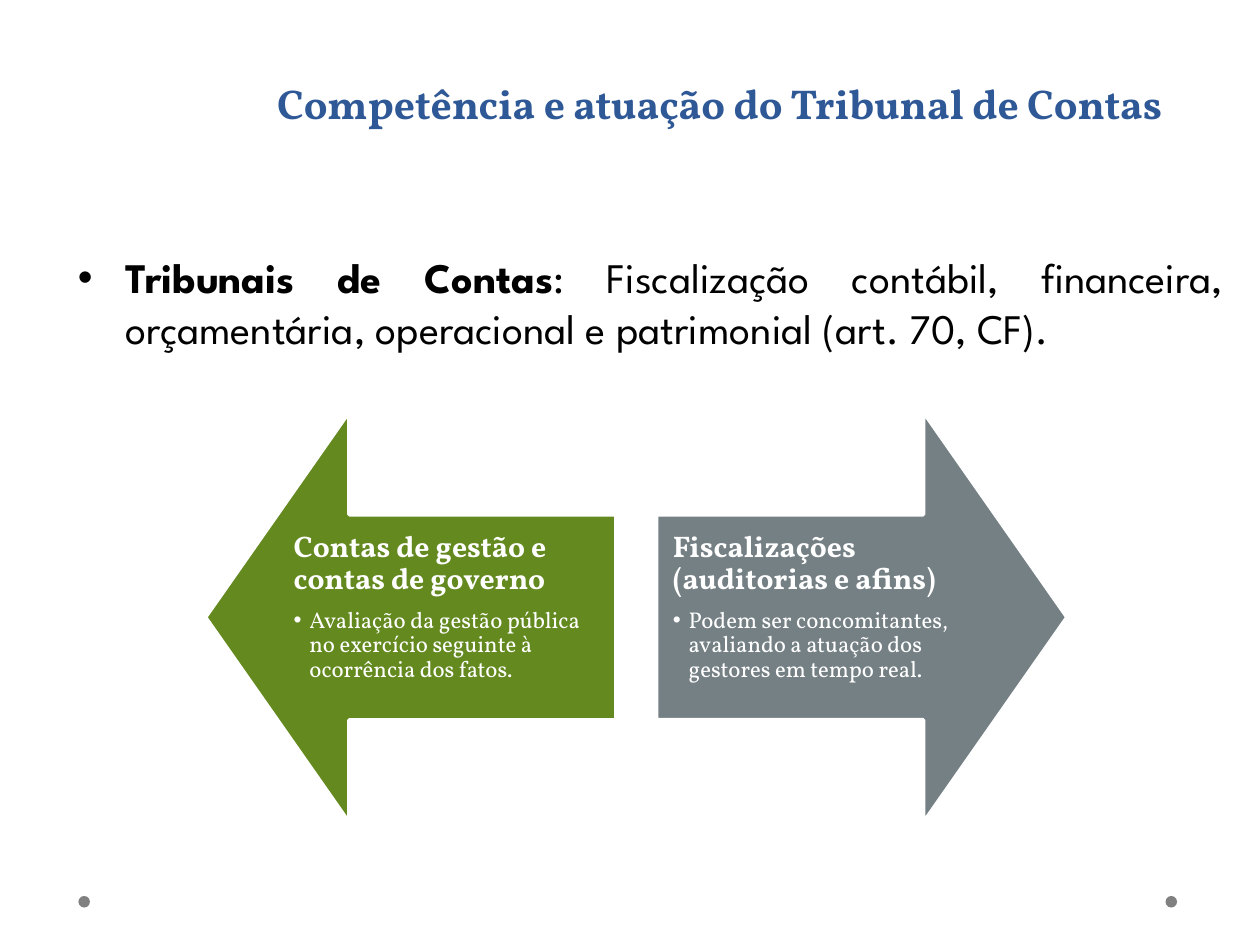
from lxml.etree import SubElement
from pptx import Presentation
from pptx.dml.color import RGBColor
from pptx.enum.shapes import MSO_SHAPE as SHAPE
from pptx.enum.text import MSO_ANCHOR as ANCHOR, PP_ALIGN as ALIGN
from pptx.oxml.ns import qn
from pptx.util import Pt

COLORS = {
    "title": "2F5897", "text": "000000", "white": "FFFFFF",
    "dot": "808080", "green": "63891F", "gray": "758085",
}
SERIF, SANS = "Vollkorn", "League Spartan"
ARROW_SIZE, ARROW_TOP = 234.7, 235.4
LABEL_W, LABEL_H, LABEL_TOP = 193.7, 117.4, 294.5


def color(name):
    return RGBColor.from_string(COLORS[name])


def add_shape(s, kind, x, y, size, fill):
    sp = s.shapes.add_shape(kind, Pt(x), Pt(y), Pt(size), Pt(size))
    sp.shadow.inherit = False
    sp.fill.solid()
    sp.fill.fore_color.rgb = color(fill)
    sp.line.fill.background()
    return sp


def add_box(s, x, y, w, h, anchor=ANCHOR.TOP, inset=None):
    tf = s.shapes.add_textbox(Pt(x), Pt(y), Pt(w), Pt(h)).text_frame
    tf.word_wrap = True
    tf.vertical_anchor = anchor
    if inset is not None:
        tf.margin_left = tf.margin_right = Pt(inset)
        tf.margin_top = tf.margin_bottom = Pt(inset)
    return tf


def add_run(p, text, size, font, fill, bold=False):
    r = p.add_run()
    r.text = text
    r.font.size = Pt(size)
    r.font.name = font
    r.font.bold = bold
    r.font.color.rgb = color(fill)


def set_bullet(p, indent):
    ppr = p._p.get_or_add_pPr()
    ppr.set("marL", str(Pt(indent)))
    ppr.set("indent", str(-Pt(indent)))
    SubElement(ppr, qn("a:buFont"), typeface="Arial")
    SubElement(ppr, qn("a:buChar"), char="•")


def add_arrow(s, x, rotation, fill, label_x, heading, detail):
    sp = add_shape(s, SHAPE.UP_ARROW, x, ARROW_TOP, ARROW_SIZE, fill)
    sp.rotation = rotation
    sp.adjustments[0], sp.adjustments[1] = 0.5, 0.35
    sp.line.color.rgb = color("white")
    sp.line.width = Pt(2.25)

    tf = add_box(s, label_x, LABEL_TOP, LABEL_W, LABEL_H, inset=9.4)
    p = tf.paragraphs[0]
    p.line_spacing, p.space_after = 0.9, Pt(7)
    add_run(p, heading, 17, SERIF, "white", bold=True)

    p = tf.add_paragraph()
    p.level = 1
    set_bullet(p, 9)
    p.line_spacing, p.space_after = 0.9, Pt(2)
    add_run(p, detail, 13, SERIF, "white")


def main():
    prs = Presentation()
    prs.slide_width, prs.slide_height = Pt(720), Pt(540)
    s = prs.slides.add_slide(prs.slide_layouts[6])

    # Footer dots
    for x in (666, 44.8):
        add_shape(s, SHAPE.OVAL, x, 512, 6.6, "dot")

    # Title
    p = add_box(s, 133.2, 9.4, 555.8, 67, ANCHOR.BOTTOM).paragraphs[0]
    p.alignment, p.line_spacing = ALIGN.CENTER, Pt(58)
    add_run(p, "Competência e atuação do Tribunal de Contas",
            23.8, SERIF, "title", bold=True)

    # Opposing arrows; each label fills its arrow's shaft
    left, right = 117.4, 375.1
    add_arrow(s, left, 270, "green", left + ARROW_SIZE - LABEL_W,
              "Contas de gestão e contas de governo",
              "Avaliação da gestão pública no exercício seguinte à "
              "ocorrência dos fatos.")
    add_arrow(s, right, 90, "gray", right,
              "Fiscalizações (auditorias e afins)",
              "Podem ser concomitantes, avaliando a atuação dos gestores "
              "em tempo real.")

    # Body statement
    p = add_box(s, 37.4, 140.4, 668.9, 67.7).paragraphs[0]
    set_bullet(p, 27)
    p.alignment = ALIGN.JUSTIFY
    add_run(p, "Tribunais de Contas", 24, SANS, "text", bold=True)
    add_run(p, ": Fiscalização contábil, financeira, orçamentária, "
            "operacional e patrimonial (art. 70, CF).", 24, SANS, "text")

    prs.save("out.pptx")


if __name__ == "__main__":
    main()
